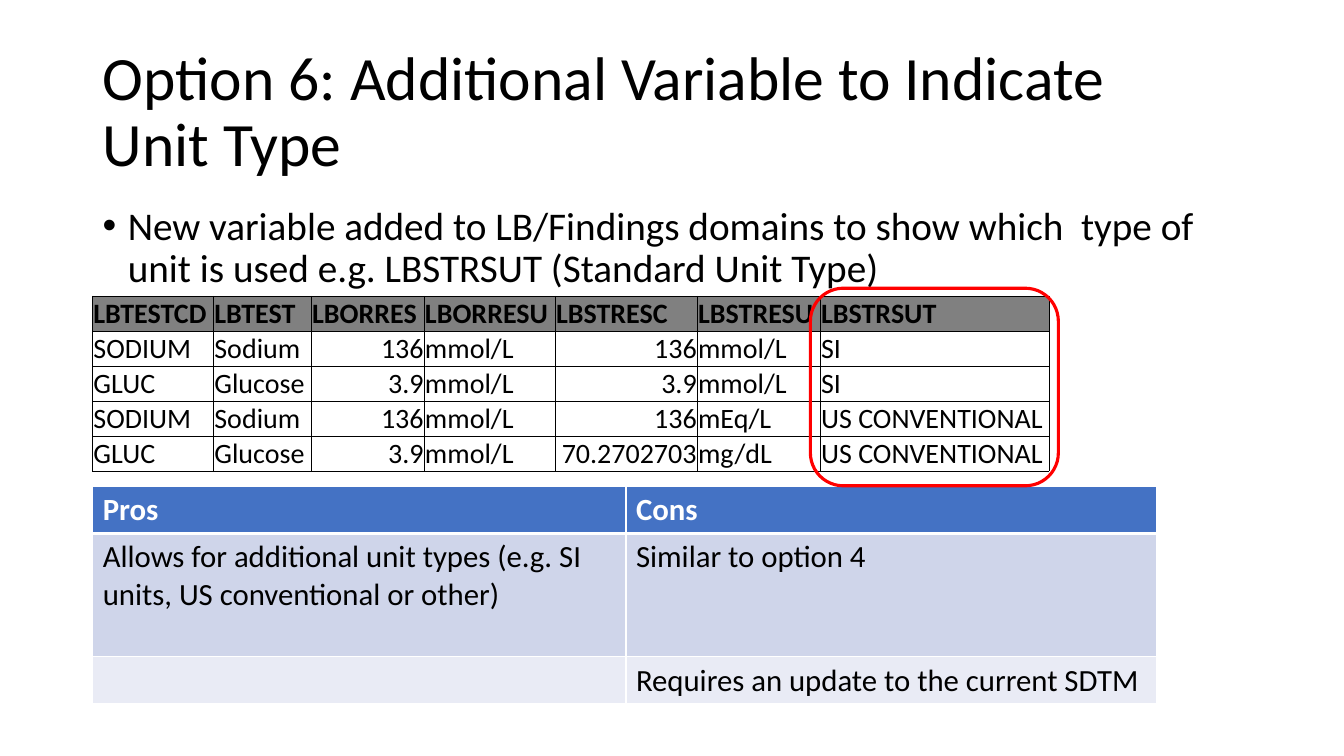
from lxml import etree
from pptx import Presentation, util as u
from pptx.dml.color import RGBColor
from pptx.enum import shapes, text
from pptx.oxml import ns

BLACK = RGBColor(0, 0, 0)
WHITE = RGBColor(0xFF, 0xFF, 0xFF)
GRAY = RGBColor(0x80, 0x80, 0x80)
BLUE = RGBColor(0x44, 0x72, 0xC4)
PALE = RGBColor(0xCF, 0xD5, 0xEA)
LIGHT = RGBColor(0xE9, 0xEB, 0xF5)
RED = RGBColor(0xFF, 0, 0)

LEFT = 66.24
LABS = [
    ["LBTESTCD", "LBTEST", "LBORRES", "LBORRESU", "LBSTRESC", "LBSTRESU", "LBSTRSUT"],
    ["SODIUM", "Sodium", "136", "mmol/L", "136", "mmol/L", "SI"],
    ["GLUC", "Glucose", "3.9", "mmol/L", "3.9", "mmol/L", "SI"],
    ["SODIUM", "Sodium", "136", "mmol/L", "136", "mEq/L", "US CONVENTIONAL"],
    ["GLUC", "Glucose", "3.9", "mmol/L", "70.2702703", "mg/dL", "US CONVENTIONAL"],
]
VIEWS = [
    ["Pros", "Cons"],
    ["Allows for additional unit types (e.g. SI units, US conventional or other)",
     "Similar to option 4"],
    ["", "Requires an update to the current SDTM"],
]


class Page:
    """Draws styled elements on one slide, with lengths in points."""

    def __init__(self, slide, font="Calibri"):
        self.slide = slide
        self.font = font

    def style(self, para, size, color=BLACK, bold=False):
        for run in para.runs:
            run.font.name = self.font
            run.font.size = u.Pt(size)
            run.font.bold = bold
            run.font.color.rgb = color

    def label(self, words, box, size, anchor=text.MSO_ANCHOR.TOP):
        frame = self.slide.shapes.add_textbox(*map(u.Pt, box)).text_frame
        frame.word_wrap = True
        frame.vertical_anchor = anchor
        frame.text = words
        para = frame.paragraphs[0]
        para.line_spacing = 0.9
        self.style(para, size)
        return para

    def bullet(self, words, box, size, indent):
        para = self.label(words, box, size)
        para.space_before = u.Pt(10)
        props = para._p.get_or_add_pPr()
        props.set("marL", str(u.Pt(indent)))
        props.set("indent", str(u.Pt(-indent)))
        etree.SubElement(props, ns.qn("a:buFont")).set("typeface", "Arial")
        etree.SubElement(props, ns.qn("a:buChar")).set("char", "•")

    def border(self, cell, color, widths):
        props = cell._tc.get_or_add_tcPr()
        for side, width in zip("LRTB", widths):
            line = etree.SubElement(props, ns.qn(f"a:ln{side}"), w=str(u.Pt(width)))
            fill = etree.SubElement(line, ns.qn("a:solidFill"))
            etree.SubElement(fill, ns.qn("a:srgbClr"), val=str(color))

    def table(self, rows, top, widths, heights, size, fills, ink, edge, thin, rule, tight=False):
        area = (LEFT, top, sum(widths), sum(heights))
        grid = self.slide.shapes.add_table(len(rows), len(widths), *map(u.Pt, area)).table
        for col, width in zip(grid.columns, widths):
            col.width = u.Pt(width)
        for i, row in enumerate(rows):
            grid.rows[i].height = u.Pt(heights[i])
            for j, words in enumerate(row):
                cell = grid.cell(i, j)
                over = rule if i == 1 else thin
                under = rule if i == 0 else thin
                self.border(cell, edge, (thin, thin, over, under))
                if fills[i] is None:
                    cell.fill.background()
                else:
                    cell.fill.solid()
                    cell.fill.fore_color.rgb = fills[i]
                if tight:
                    cell.margin_left = cell.margin_right = cell.margin_top = u.Pt(0.5)
                    cell.margin_bottom = 0
                    cell.vertical_anchor = text.MSO_ANCHOR.BOTTOM
                cell.text_frame.text = words
                para = cell.text_frame.paragraphs[0]
                if words[:1].isdigit():
                    para.alignment = text.PP_ALIGN.RIGHT
                self.style(para, size, BLACK if i else ink, i == 0)

    def frame(self, box, color, width):
        ring = self.slide.shapes.add_shape(
            shapes.MSO_SHAPE.ROUNDED_RECTANGLE, *map(u.Pt, box))
        ring.shadow.inherit = False
        ring.fill.background()
        ring.line.color.rgb = color
        ring.line.width = u.Pt(width)


def main():
    deck = Presentation()
    deck.slide_width, deck.slide_height = u.Pt(960), u.Pt(540)
    page = Page(deck.slides.add_slide(deck.slide_layouts[6]))
    page.label("Option 6: Additional Variable to Indicate Unit Type",
               (LEFT, 28.8, 808.56, 104.4), 44, text.MSO_ANCHOR.MIDDLE)
    page.bullet("New variable added to LB/Findings domains to show which  type of "
                "unit is used e.g. LBSTRSUT (Standard Unit Type)",
                (LEFT, 144, 828, 342.72), 28, 18)
    page.table(VIEWS, 347.5, [380.88, 378.72], [33, 88, 33], 22,
               [BLUE, PALE, LIGHT], WHITE, WHITE, 1, 3)
    page.table(LABS, 211.5, [86.4, 69.84, 80.64, 93.6, 101.52, 87.84, 163.44], [25] * 5, 20,
               [GRAY] + [None] * 4, BLACK, BLACK, 0.5, 0.5, tight=True)
    page.frame((578.88, 205.92, 177.12, 141.12), RED, 2.25)
    deck.save("out.pptx")


if __name__ == "__main__":
    main()
